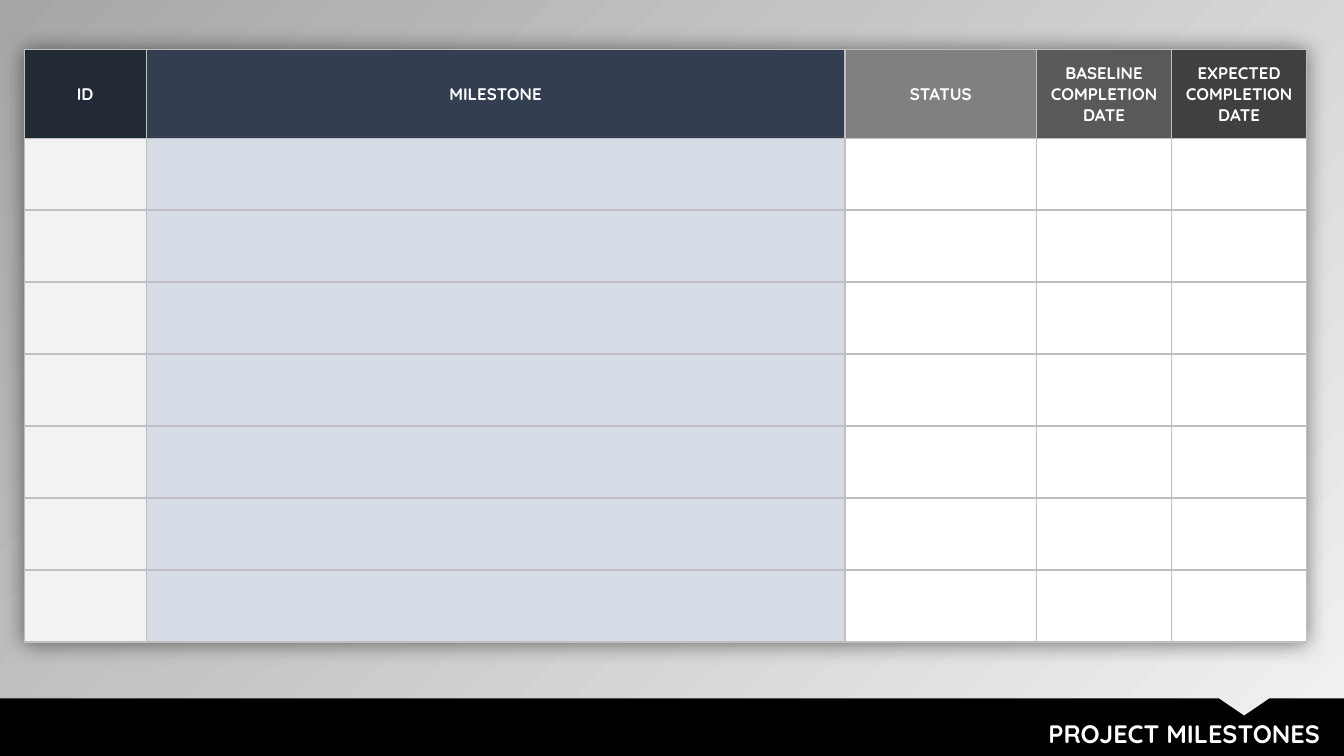
from lxml import etree
from pptx import Presentation
from pptx.dml.color import RGBColor
from pptx.enum.text import MSO_ANCHOR, MSO_AUTO_SIZE, PP_ALIGN
from pptx.oxml import parse_xml
from pptx.oxml.ns import qn
from pptx.util import Inches, Pt

MIDDLE = MSO_ANCHOR.MIDDLE
GROW = MSO_AUTO_SIZE.SHAPE_TO_FIT_TEXT
CENTER, RIGHT = PP_ALIGN.CENTER, PP_ALIGN.RIGHT
DRAWING_NS = "http://schemas.openxmlformats.org/drawingml/2006/main"

SLIDE_W, SLIDE_H = 13.33, 7.5
FONT = "Quicksand"
WHITE, BLACK, GRID_LINE = "FFFFFF", "000000", "BFBFBF"

# Heading, width, heading fill, body fill
COLUMNS = [
    ("ID", 1.21, "222A35", "F2F2F2"),
    ("MILESTONE", 6.93, "333F50", "D6DCE5"),
    ("STATUS", 1.9, "808080", WHITE),
    ("BASELINE COMPLETION DATE", 1.34, "595959", WHITE),
    ("EXPECTED COMPLETION DATE", 1.34, "404040", WHITE),
]
MILESTONE_ROWS = 7
HEADING_H = 0.88


def color(hex_value):
    return RGBColor.from_string(hex_value)


def paint(target, hex_value):
    target.fill.solid()
    target.fill.fore_color.rgb = color(hex_value)


def write(frame, text, size, align):
    paragraph = frame.paragraphs[0]
    paragraph.alignment = align
    run = paragraph.add_run()
    run.text = text
    for key, value in {"name": FONT, "size": Pt(size), "bold": True}.items():
        setattr(run.font, key, value)
    run.font.color.rgb = color(WHITE)


def outline_cell(cell):
    properties = cell._tc.get_or_add_tcPr()
    for index, side in enumerate(("lnL", "lnR", "lnT", "lnB")):
        line = etree.Element(qn(f"a:{side}"), w=str(Pt(1)))
        fill = etree.SubElement(line, qn("a:solidFill"))
        etree.SubElement(fill, qn("a:srgbClr"), val=GRID_LINE)
        properties.insert(index, line)


def add_background(slide):
    fill = slide.background.fill
    fill.gradient()
    fill.gradient_angle = 135
    for stop, shade in zip(fill.gradient_stops, ("F2F2F2", "A6A6A6")):
        stop.color.rgb = color(shade)
    light = slide.element.xpath(".//p:bg//a:srgbClr")[0]
    etree.SubElement(light, qn("a:alpha"), val="40000")


def add_footer(slide, left, top, width, height):
    # Band with a notch in its upper edge
    right, bottom = left + width, top + height
    notch_x, notch_half, notch_depth = right - 0.99, 0.25, 0.17
    outline = [
        (notch_x - notch_half, top), (notch_x, top + notch_depth),
        (notch_x + notch_half, top), (right, top),
        (right, bottom), (left, bottom),
    ]
    builder = slide.shapes.build_freeform(Inches(left), Inches(top))
    builder.add_line_segments([(Inches(x), Inches(y)) for x, y in outline])
    band = builder.convert_to_shape()
    band.shadow.inherit = False
    paint(band, BLACK)
    band.line.fill.background()

    # Title
    title_w = 6.78
    title = slide.shapes.add_textbox(
        Inches(right - 0.14 - title_w), Inches(top + 0.15),
        Inches(title_w), Inches(0.4))
    title.text_frame.word_wrap = True
    title.text_frame.auto_size = GROW
    write(title.text_frame, "PROJECT MILESTONES", 18, RIGHT)


def add_milestones(slide, left, top, width, height):
    frame = slide.shapes.add_table(
        MILESTONE_ROWS + 1, len(COLUMNS),
        Inches(left), Inches(top), Inches(width), Inches(height))
    table = frame.table
    table.horz_banding = False

    # Soft shadow around the table
    table._tbl.tblPr.insert(0, parse_xml(
        f'<a:effectLst xmlns:a="{DRAWING_NS}">'
        '<a:outerShdw blurRad="190500" algn="ctr" rotWithShape="0">'
        '<a:srgbClr val="000000"><a:alpha val="50000"/></a:srgbClr>'
        '</a:outerShdw></a:effectLst>'))

    # Row heights
    body_h = (height - HEADING_H) / MILESTONE_ROWS
    for index, row in enumerate(table.rows):
        row.height = Inches(body_h if index else HEADING_H)

    # Headings and empty cells
    margins = {"margin_left": 0.01, "margin_right": 0.01,
               "margin_top": 0.01, "margin_bottom": 0}
    for col, (heading, col_w, heading_fill, body_fill) in enumerate(COLUMNS):
        table.columns[col].width = Inches(col_w)
        for row in range(MILESTONE_ROWS + 1):
            cell = table.cell(row, col)
            paint(cell, body_fill if row else heading_fill)
            outline_cell(cell)
        heading_cell = table.cell(0, col)
        heading_cell.vertical_anchor = MIDDLE
        for key, value in margins.items():
            setattr(heading_cell, key, Inches(value))
        write(heading_cell.text_frame, heading, 12, CENTER)


def main():
    deck = Presentation()
    deck.slide_width, deck.slide_height = Inches(SLIDE_W), Inches(SLIDE_H)
    slide = deck.slides.add_slide(deck.slide_layouts[6])
    footer_h = 0.57
    add_background(slide)
    add_footer(slide, 0, SLIDE_H - footer_h, SLIDE_W, footer_h)
    add_milestones(slide, 0.24, 0.49, 12.71, 5.88)
    deck.save("out.pptx")


if __name__ == "__main__":
    main()
